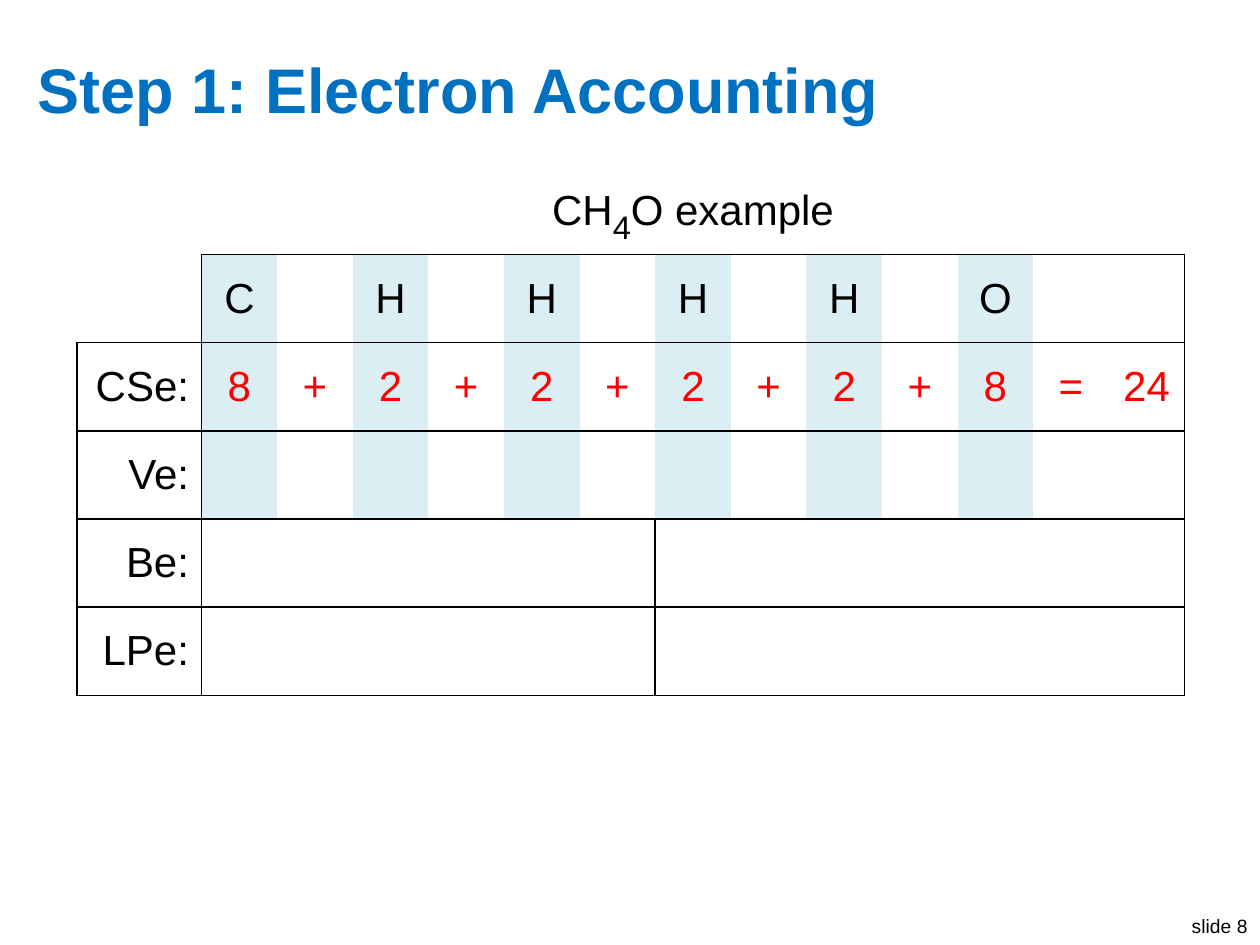
"""Build the electron accounting slide with its CH4O table."""
from lxml import etree
from pptx import Presentation
from pptx.dml.color import RGBColor
from pptx.enum import text
from pptx.oxml import ns
from pptx.util import Pt

ALIGN = text.PP_ALIGN


def style(font, size, color, bold=False):
    font.name, font.size, font.bold = "Arial", Pt(size), bold
    font.color.rgb = RGBColor.from_string(color)


def border(cell, side, shown):
    line = etree.SubElement(cell._tc.get_or_add_tcPr(), ns.qn("a:ln" + side), w=str(Pt(1)))
    if shown:
        fill = etree.SubElement(line, ns.qn("a:solidFill"))
        etree.SubElement(fill, ns.qn("a:srgbClr"), val="000000")
    else:
        etree.SubElement(line, ns.qn("a:noFill"))


deck = Presentation()
deck.slide_width, deck.slide_height = Pt(720), Pt(540)
slide = deck.slides.add_slide(deck.slide_layouts[5])

title = slide.shapes.title
title.left, title.top, title.width, title.height = Pt(14.4), Pt(21.6), Pt(691.2), Pt(57.6)
title.text_frame.text = "Step 1: Electron Accounting"
title.text_frame.vertical_anchor = text.MSO_ANCHOR.MIDDLE
head = title.text_frame.paragraphs[0]
head.alignment = ALIGN.LEFT
style(head.font, 36, "0070C0", True)

atoms = ["C", "H", "H", "H", "H", "O"]
counts = [8, 2, 2, 2, 2, 8]
sums = " + ".join(map(str, counts)).split() + ["=", str(sum(counts))]
words = {(row, 0): label for row, label in enumerate(["CSe:", "Ve:", "Be:", "LPe:"], 2)}
words.update({(1, 2 * i + 1): atom for i, atom in enumerate(atoms)})
words.update({(2, col): term for col, term in enumerate(sums, 1)})

rows, cols = 6, 14
table = slide.shapes.add_table(rows, cols, Pt(43.9), Pt(95), Pt(632.9), Pt(302.4)).table
table.first_row = table.horz_banding = False
for row in table.rows:
    row.height = Pt(50.4)
for i, col in enumerate(table.columns):
    col.width = Pt(43.2 if i else 71.3)
for row, first, last in [(0, 1, 13), (4, 1, 6), (4, 7, 13), (5, 1, 6), (5, 7, 13)]:
    table.cell(row, first).merge(table.cell(row, last))

starts = {0: 2, 1: 1, 7: 4, cols: 1}
for row in range(rows):
    for col in range(cols):
        cell = table.cell(row, col)
        border(cell, "L", row >= starts.get(col, rows))
        border(cell, "R", row >= starts.get(col + cell.span_width, rows))
        border(cell, "T", row > 1 or row == 1 and col > 0)
        border(cell, "B", row > 0 or col > 0)
        cell.fill.solid()
        tint = row in (1, 2, 3) and col in range(1, 12, 2)
        cell.fill.fore_color.rgb = RGBColor.from_string("DBEEF4" if tint else "FFFFFF")
        cell.vertical_anchor = text.MSO_ANCHOR.MIDDLE
        if (row, col) in words:
            para = cell.text_frame.paragraphs[0]
            para.text = words[row, col]
            para.alignment = ALIGN.CENTER if col else ALIGN.RIGHT
            style(para.font, 24, "FF0000" if row == 2 and col else "000000")

para = table.cell(0, 1).text_frame.paragraphs[0]
para.alignment = ALIGN.CENTER
for part, size, base in [("CH", 24, 0), ("4", 32, -25000), ("O example", 24, 0)]:
    run = para.add_run()
    run.text = part
    style(run.font, size, "000000")
    if base:
        run._r.get_or_add_rPr().set("baseline", str(base))

foot = slide.shapes.add_textbox(Pt(666), Pt(519.1), Pt(54), Pt(20.9)).text_frame
foot.word_wrap = False
foot.text = "slide 8"
foot.paragraphs[0].alignment = ALIGN.RIGHT
style(foot.paragraphs[0].font, 11, "000000")

deck.save("out.pptx")
